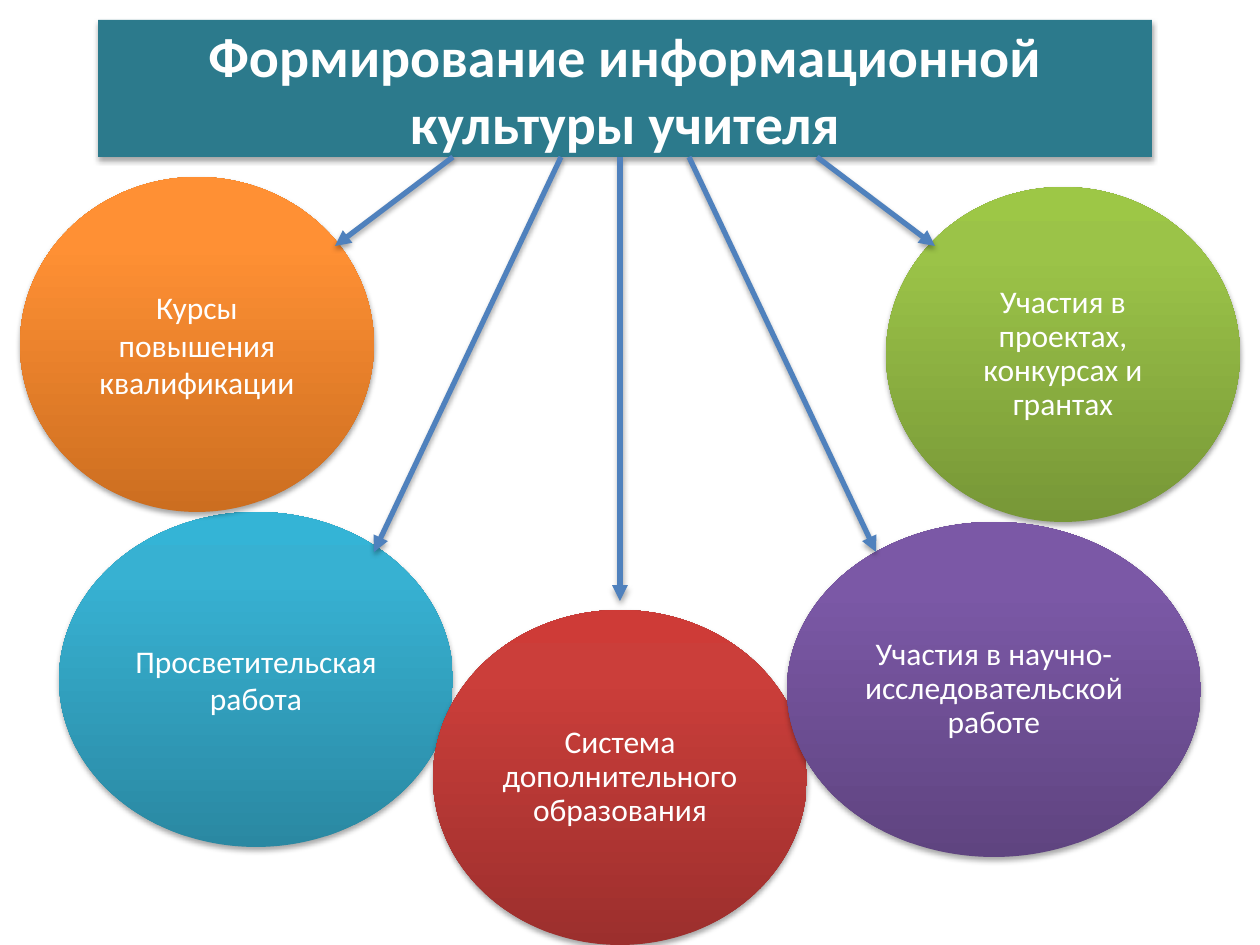
import copy

import pptx
import pptx.dml.color
import pptx.enum.shapes
import pptx.enum.text
import pptx.oxml
import pptx.oxml.ns
import pptx.util

PX = pptx.util.Inches(1) / 126
SLIDE_WIDTH, SLIDE_HEIGHT = 1260, 945
FONT = "Calibri"
WHITE, TEAL, BLUE = "FFFFFF", "2C7A8C", "4F81BD"

TITLE = "Формирование информационной культуры учителя"
TITLE_BOX = (98, 20, 1054, 137)
CIRCLE_HEIGHT = 335

# text, left, top, width, line spacing, gradient from bottom to top
CIRCLES = [
    ("Просветительская работа", 59, 512, 394, 1.0, ("2A88A2", "37B1D2", "34B4D6")),
    ("Участия в проектах, конкурсах и грантах", 886, 187, 354, 0.9,
     ("779737", "9BC348", "9DC746")),
    ("Система дополнительного образования", 433, 610, 374, 0.9,
     ("9C2F2D", "CB3E3A", "CE3B37")),
    ("Участия в научно-исследовательской работе", 787, 522, 414, 0.9,
     ("5F4480", "7B58A6", "7C57A8")),
    ("Курсы повышения квалификации", 20, 177, 354, 1.0, ("CC6E20", "FF9034", "FF9136")),
]

# start from the title's left edge, then the tip on the slide
ARROWS = [
    (463, (374, 552)),
    (355, (335, 246)),
    (719, (935, 246)),
    (522, (620, 601)),
    (591, (876, 552)),
]


def px(length):
    return pptx.util.Emu(round(length * PX))


def rgb(color):
    return pptx.dml.color.RGBColor.from_string(color)


def add_shadow(shape):
    properties = shape._element.spPr
    for old in properties.findall(pptx.oxml.ns.qn("a:effectLst")):
        properties.remove(old)
    properties.append(pptx.oxml.parse_xml(
        f'<a:effectLst {pptx.oxml.ns.nsdecls("a")}>'
        '<a:outerShdw blurRad="40000" dist="23000" dir="5400000" rotWithShape="0">'
        '<a:srgbClr val="000000"><a:alpha val="35000"/></a:srgbClr>'
        '</a:outerShdw></a:effectLst>'))


def fill_gradient(shape, colors):
    """Fill upwards with three colours, the middle one at 80 %."""
    shape.fill.gradient()
    shape.fill.gradient_angle = 90
    stop_list = shape._element.spPr.find(".//" + pptx.oxml.ns.qn("a:gsLst"))
    stop_list.insert(1, copy.deepcopy(stop_list[0]))
    for stop, color, position in zip(shape.fill.gradient_stops, colors, (0, 0.8, 1)):
        stop.color.rgb = rgb(color)
        stop.position = position


def add_label_shape(slide, kind, box, text, size, bold=False, spacing=1.0):
    shape = slide.shapes.add_shape(kind, *map(px, box))
    shape.line.fill.background()
    frame = shape.text_frame
    frame.word_wrap = True
    frame.vertical_anchor = pptx.enum.text.MSO_ANCHOR.MIDDLE
    frame.text = text
    paragraph = frame.paragraphs[0]
    paragraph.alignment = pptx.enum.text.PP_ALIGN.CENTER
    paragraph.line_spacing = spacing
    font = paragraph.runs[0].font
    font.name, font.size, font.bold = FONT, pptx.util.Pt(size), bold
    font.color.rgb = rgb(WHITE)
    return shape


def add_title(slide, box):
    shape = add_label_shape(slide, pptx.enum.shapes.MSO_SHAPE.RECTANGLE, box, TITLE, 32, bold=True)
    shape.fill.solid()
    shape.fill.fore_color.rgb = rgb(TEAL)
    add_shadow(shape)


def add_circle(slide, box, text, spacing, colors):
    shape = add_label_shape(slide, pptx.enum.shapes.MSO_SHAPE.OVAL, box, text, 18, spacing=spacing)
    fill_gradient(shape, colors)
    add_shadow(shape)


def add_arrows(slide, box):
    """Draw the arrows that fan out from the lower edge of the box."""
    left, top, _, height = box
    for offset, tip in ARROWS:
        connector = slide.shapes.add_connector(
            pptx.enum.shapes.MSO_CONNECTOR.STRAIGHT,
            px(left + offset), px(top + height), *map(px, tip))
        connector.line.color.rgb = rgb(BLUE)
        connector.line.width = pptx.util.Pt(3)
        connector.line._get_or_add_ln().append(pptx.oxml.parse_xml(
            f'<a:tailEnd {pptx.oxml.ns.nsdecls("a")} type="triangle"/>'))
        add_shadow(connector)


def main():
    presentation = pptx.Presentation()
    presentation.slide_width = px(SLIDE_WIDTH)
    presentation.slide_height = px(SLIDE_HEIGHT)
    slide = presentation.slides.add_slide(presentation.slide_layouts[6])
    for text, left, top, width, spacing, colors in CIRCLES:
        add_circle(slide, (left, top, width, CIRCLE_HEIGHT), text, spacing, colors)
    add_title(slide, TITLE_BOX)
    add_arrows(slide, TITLE_BOX)
    presentation.save("out.pptx")


if __name__ == "__main__":
    main()
